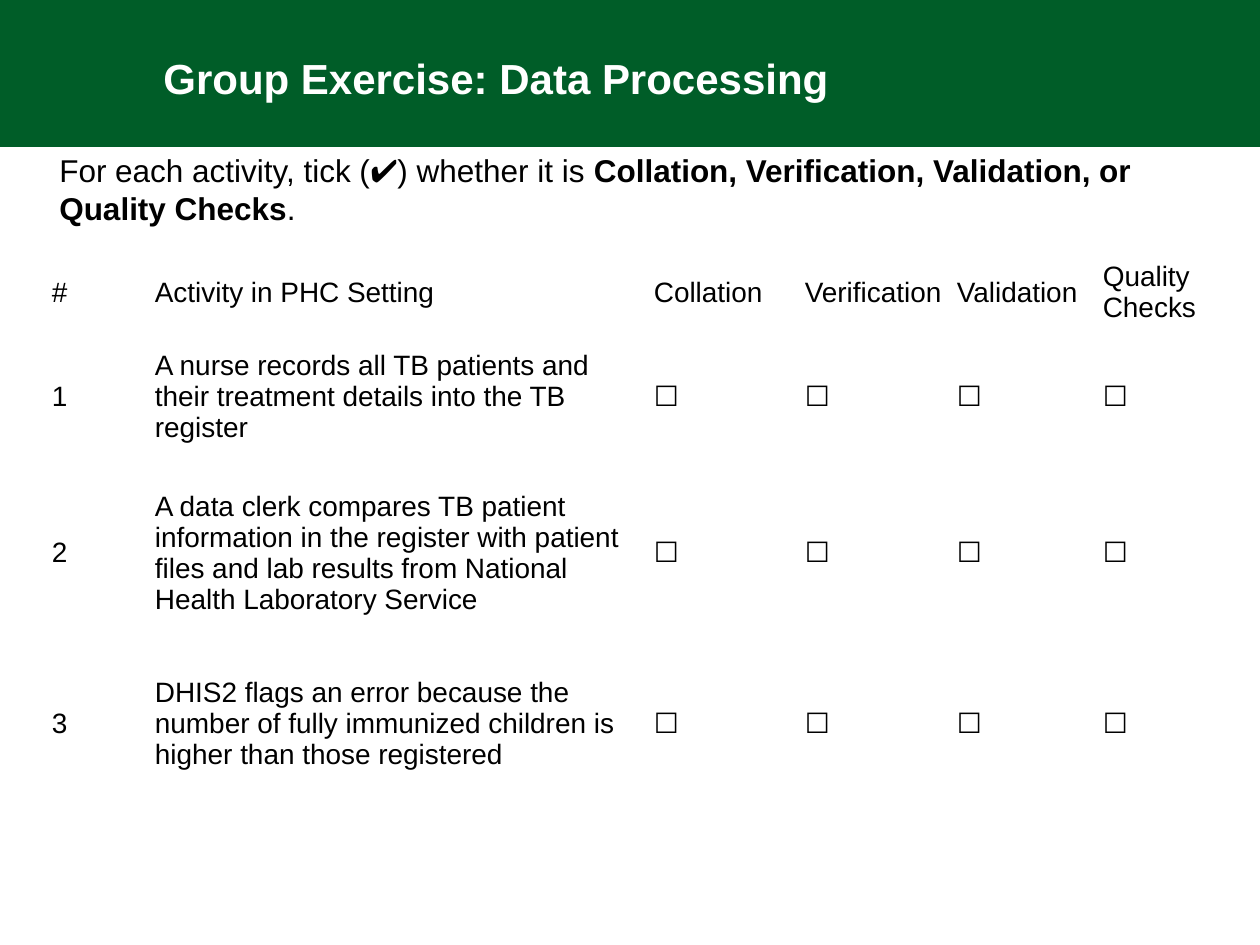
from pptx import Presentation
from pptx.dml.color import RGBColor
from pptx.enum.shapes import MSO_SHAPE
from pptx.enum.text import MSO_ANCHOR
from pptx.util import Emu, Pt

RECTANGLE = MSO_SHAPE.RECTANGLE
TOP, MIDDLE = MSO_ANCHOR.TOP, MSO_ANCHOR.MIDDLE
PX_PER_INCH = 126
COLORS = {"green": "005D28", "white": "FFFFFF", "black": "000000"}

CATEGORIES = ["Collation", "Verification", "Validation", "Quality Checks"]
ACTIVITIES = [
    "A nurse records all TB patients and their treatment details into the TB register",
    "A data clerk compares TB patient information in the register with patient files "
    "and lab results from National Health Laboratory Service",
    "DHIS2 flags an error because the number of fully immunized children is higher "
    "than those registered",
]
COLUMN_WIDTHS = [103, 499, 151, 152, 146, 146]
ROW_HEIGHTS = [83, 126, 186, 156]


def px(length):
    return Emu(round(length * 914400 / PX_PER_INCH))


class SlideBuilder:
    font_name = "Arial"

    def __init__(self, slide):
        self.slide = slide

    def style_run(self, run, size, color, bold=False):
        run.font.name = self.font_name
        run.font.size = Pt(size)
        run.font.bold = bold
        run.font.color.rgb = RGBColor.from_string(COLORS[color])

    def band(self, left, top, width, height, color):
        band = self.slide.shapes.add_shape(
            RECTANGLE, px(left), px(top), px(width), px(height))
        band.shadow.inherit = False
        band.fill.solid()
        band.fill.fore_color.rgb = RGBColor.from_string(COLORS[color])
        band.line.fill.background()

    def text(self, left, top, width, height, paragraphs, size, color, anchor=TOP):
        """Add a text box; each paragraph is a list of (wording, bold) pairs."""
        frame = self.slide.shapes.add_textbox(
            px(left), px(top), px(width), px(height)).text_frame
        frame.word_wrap = True
        frame.vertical_anchor = anchor
        for index, pieces in enumerate(paragraphs):
            paragraph = frame.add_paragraph() if index else frame.paragraphs[0]
            for wording, bold in pieces:
                run = paragraph.add_run()
                run.text = wording
                self.style_run(run, size, color, bold)

    def table(self, left, top, widths, heights, rows, size, color):
        table = self.slide.shapes.add_table(
            len(heights), len(widths), px(left), px(top),
            px(sum(widths)), px(sum(heights))).table
        table.first_row = table.horz_banding = False
        for column, width in zip(table.columns, widths):
            column.width = px(width)
        for row, height, wordings in zip(table.rows, heights, rows):
            row.height = px(height)
            for cell, wording in zip(row.cells, wordings):
                cell.fill.background()
                cell.vertical_anchor = MIDDLE
                cell.margin_left = cell.margin_right = px(5)
                cell.margin_top = cell.margin_bottom = px(3)
                cell.text_frame.text = wording
                self.style_run(cell.text_frame.paragraphs[0].runs[0], size, color)


def main():
    presentation = Presentation()
    presentation.slide_width, presentation.slide_height = px(1260), px(945)
    blank_layout = presentation.slide_layouts[6]
    builder = SlideBuilder(presentation.slides.add_slide(blank_layout))

    builder.band(0, 0, 1260, 147, "green")

    header = ["#", "Activity in PHC Setting", *CATEGORIES]
    exercises = [[str(number), activity] + ["☐"] * len(CATEGORIES)
                 for number, activity in enumerate(ACTIVITIES, 1)]
    builder.table(47, 251, COLUMN_WIDTHS, ROW_HEIGHTS, [header, *exercises], 16, "black")

    builder.text(151, 46, 987, 63, [[("Group Exercise: Data Processing", True)]],
                 24, "white", MIDDLE)
    builder.text(47, 145, 1197, 89, [
        [("For each activity, tick (✔) whether it is ", False),
         ("Collation, Verification, Validation, or", True)],
        [("Quality Checks", True), (".", False)],
    ], 18, "black")

    presentation.save("out.pptx")


if __name__ == "__main__":
    main()
